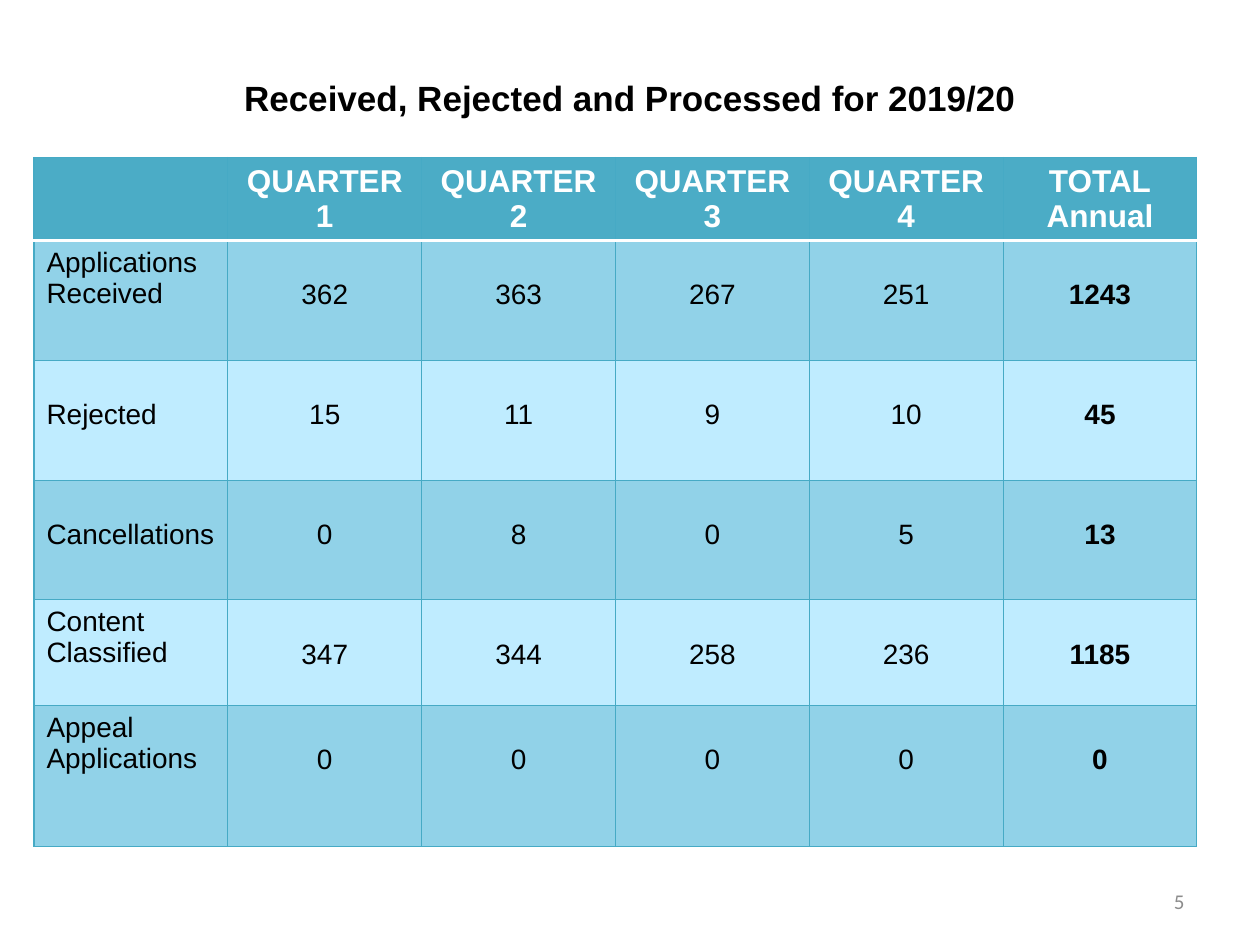
from dataclasses import dataclass

from lxml import etree
from pptx import Presentation
from pptx.dml.color import RGBColor
from pptx.enum.text import MSO_ANCHOR, PP_ALIGN
from pptx.oxml.ns import qn
from pptx.util import Inches, Pt

LEFT, MID, RIGHT = PP_ALIGN.LEFT, PP_ALIGN.CENTER, PP_ALIGN.RIGHT
TOP, CENTER = MSO_ANCHOR.TOP, MSO_ANCHOR.MIDDLE


@dataclass(frozen=True)
class Theme:
    font: str = "Arial"
    foot: str = "Calibri"
    ink: str = "000000"
    white: str = "FFFFFF"
    gray: str = "8C8C8C"
    head: str = "4BACC6"
    dark: str = "91D2E8"
    light: str = "BFECFF"
    edge: str = "46AAC5"
    title: int = 20
    label: int = 18
    body: int = 16
    small: int = 12


@dataclass(frozen=True)
class Row:
    name: str
    counts: tuple[int, ...]
    high: float
    lead: bool = False


THEME = Theme()
HEADS = ["", *(f"QUARTER {n}" for n in range(1, 5)), "TOTAL\nAnnual"]
ROWS = [
    Row("Applications Received", (362, 363, 267, 251, 1243), 0.95),
    Row("Rejected", (15, 11, 9, 10, 45), 0.95, True),
    Row("Cancellations", (0, 8, 0, 5, 13), 0.95, True),
    Row("Content Classified", (347, 344, 258, 236, 1185), 0.84),
    Row("Appeal Applications", (0, 0, 0, 0, 0), 1.12),
]
HEAD_HIGH = 0.65
WIDE = 9.23
PAD = 0.05
LEAD = 0.31


def write(frame, text: str, *, size: int = THEME.body, color: str = THEME.ink,
          bold: bool = False, align=MID, font: str = THEME.font) -> None:
    frame.word_wrap = True
    frame.text = text
    for para in frame.paragraphs:
        para.alignment = align
        style = para.font
        style.name, style.size, style.bold = font, Pt(size), bold
        style.color.rgb = RGBColor.from_string(color)


def add_edge(cell, side: str, color: str, width: float) -> None:
    props = cell._tc.get_or_add_tcPr()
    line = etree.SubElement(props, qn(f"a:ln{side}"), w=str(Pt(width)))
    fill = etree.SubElement(line, qn("a:solidFill"))
    etree.SubElement(fill, qn("a:srgbClr"), val=color)


def paint(cell, fill: str, row: int) -> None:
    rule = {"T": row == 1, "B": row == 0}
    for side in "LRTB":
        if rule.get(side):
            add_edge(cell, side, THEME.white, 2)
        else:
            add_edge(cell, side, THEME.edge, 0.75)
    cell.fill.solid()
    cell.fill.fore_color.rgb = RGBColor.from_string(fill)
    cell.vertical_anchor = TOP


def add_grid(slide) -> None:
    highs = [HEAD_HIGH, *(row.high for row in ROWS)]
    frame = slide.shapes.add_table(len(highs), len(HEADS), Inches(0.27), Inches(1.25),
                                   Inches(WIDE), Inches(sum(highs)))
    grid = frame.table
    grid.horz_banding = False
    for col in grid.columns:
        col.width = Inches(WIDE / len(HEADS))
    for line, high in zip(grid.rows, highs):
        line.height = Inches(high)
    for c, text in enumerate(HEADS):
        cell = grid.cell(0, c)
        paint(cell, THEME.head, 0)
        write(cell.text_frame, text, size=THEME.label, color=THEME.white, bold=True)
    for r, row in enumerate(ROWS, 1):
        for c, value in enumerate((row.name, *row.counts)):
            cell = grid.cell(r, c)
            paint(cell, THEME.dark if r % 2 else THEME.light, r)
            cell.margin_top = Inches(LEAD if c or row.lead else PAD)
            write(cell.text_frame, str(value), bold=c == len(HEADS) - 1,
                  align=MID if c else LEFT)


def main() -> None:
    deck = Presentation()
    deck.slide_width, deck.slide_height = Inches(10), Inches(7.5)
    slide = deck.slides.add_slide(deck.slide_layouts[5])
    title = slide.shapes.title
    title.left, title.top = Inches(0.5), Inches(0.3)
    title.width, title.height = Inches(9), Inches(0.95)
    title.text_frame.vertical_anchor = CENTER
    write(title.text_frame, "Received, Rejected and Processed for 2019/20",
          size=THEME.title, bold=True)
    add_grid(slide)
    page = slide.shapes.add_textbox(Inches(7.17), Inches(6.95), Inches(2.33), Inches(0.4))
    page.text_frame.vertical_anchor = CENTER
    write(page.text_frame, "5", size=THEME.small, color=THEME.gray, align=RIGHT,
          font=THEME.foot)
    deck.save("out.pptx")


if __name__ == "__main__":
    main()
